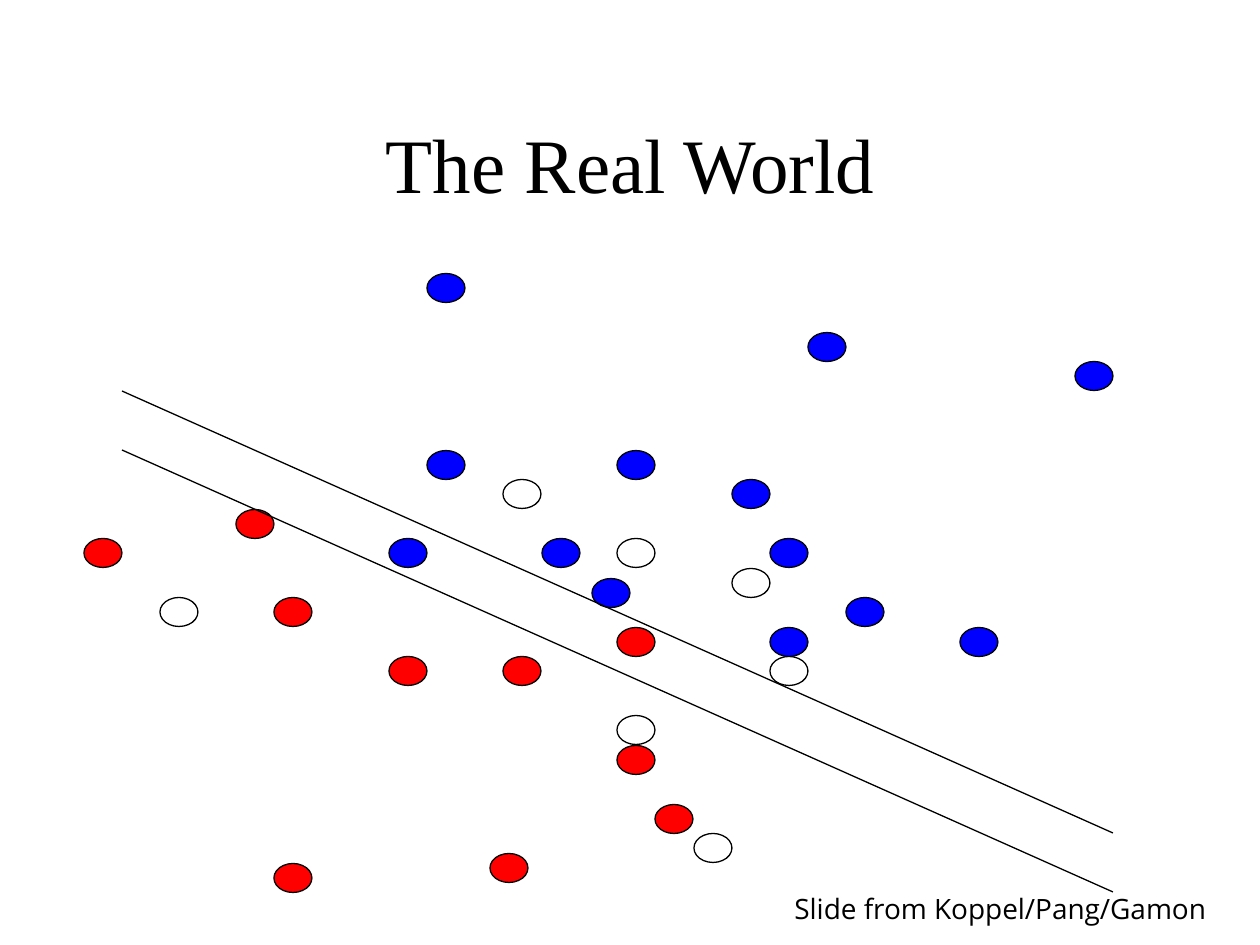
from pptx import Presentation
from pptx.dml.color import RGBColor
from pptx.enum.shapes import MSO_CONNECTOR, MSO_SHAPE
from pptx.enum.text import MSO_ANCHOR, PP_ALIGN
from pptx.oxml.ns import qn
from pptx.util import Pt
from lxml.etree import SubElement

SCALE = 914400 / 126
RED, BLUE, WHITE, BLACK = "FF0000", "0000FF", "FFFFFF", "000000"
WIDE, HIGH = 38, 29


def emu(*px):
    return [round(n * SCALE) for n in px]


def color(target, code):
    target.rgb = RGBColor.from_string(code)


deck = Presentation()
deck.slide_width, deck.slide_height = emu(1260, 945)
slide = deck.slides.add_slide(deck.slide_layouts[6])
shapes = slide.shapes

texts = [
    ("The Real World", (95, 84, 1071, 158), PP_ALIGN.CENTER, MSO_ANCHOR.MIDDLE,
     {"name": "Times New Roman", "size": Pt(44)}),
    ("Slide from Koppel/Pang/Gamon", (782, 885, 478, 47), PP_ALIGN.LEFT, MSO_ANCHOR.TOP,
     {"name": "Open Sans", "size": Pt(16)}),
]

marks = [
    (RED, [(103, 553), (255, 524), (293, 612), (293, 878), (408, 671),
           (636, 760), (522, 671), (509, 868), (674, 819)]),
    (BLUE, [(561, 553), (446, 465), (751, 494), (636, 465), (979, 642),
            (789, 642), (865, 612), (789, 553), (827, 347), (611, 593),
            (1094, 376), (446, 288)]),
    ("line", [(450, 892), (391, 833)]),
    (WHITE, [(179, 612), (522, 494), (636, 553), (789, 671), (751, 583), (713, 848)]),
    (RED, [(636, 642)]),
    (BLUE, [(408, 553)]),
    (WHITE, [(636, 730)]),
]

for kind, spots in marks:
    for a, b in spots:
        if kind == "line":
            item = shapes.add_connector(MSO_CONNECTOR.STRAIGHT, *emu(122, a, 1113, b))
            SubElement(item._element.spPr, qn("a:effectLst"))
        else:
            item = shapes.add_shape(
                MSO_SHAPE.OVAL, *emu(a - WIDE / 2, b - HIGH / 2, WIDE, HIGH))
            item.shadow.inherit = False
            item.fill.solid()
            color(item.fill.fore_color, kind)
        item.line.width = Pt(0.75)
        color(item.line.color, BLACK)

for words, place, align, anchor, style in texts:
    frame = shapes.add_textbox(*emu(*place)).text_frame
    frame.word_wrap = True
    frame.vertical_anchor = anchor
    line = frame.paragraphs[0]
    line.alignment = align
    run = line.add_run()
    run.text = words
    for key, value in style.items():
        setattr(run.font, key, value)
    color(run.font.color, BLACK)

deck.save("out.pptx")
